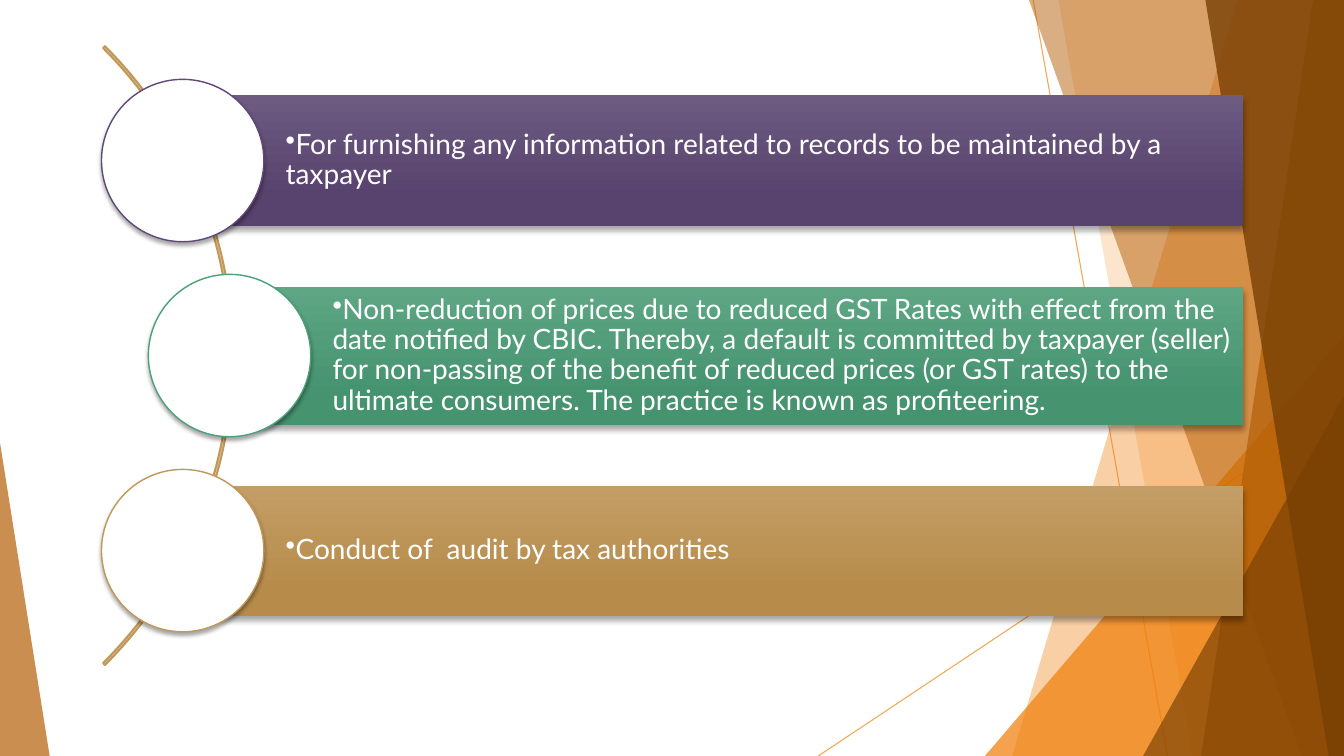
from lxml.etree import SubElement
from pptx import Presentation
from pptx.dml.color import RGBColor
from pptx.enum.shapes import MSO_CONNECTOR, MSO_SHAPE
from pptx.enum.text import MSO_ANCHOR, PP_ALIGN
from pptx.oxml.ns import qn
from pptx.util import Pt

WIDTH, HEIGHT = 960, 540
WHITE = RGBColor(0xFF, 0xFF, 0xFF)
ORANGE = RGBColor(0xF0, 0x7F, 0x09)
RUST = RGBColor(0xB4, 0x5F, 0x07)
BROWN = RGBColor(0x78, 0x40, 0x04)
PURPLE = RGBColor(0x60, 0x48, 0x78)
PURPLE_TOP = RGBColor(0x6D, 0x5B, 0x81)
PURPLE_END = RGBColor(0x58, 0x42, 0x6E)
GREEN = RGBColor(0x4D, 0xA0, 0x7B)
GREEN_TOP = RGBColor(0x5E, 0xA6, 0x84)
GREEN_END = RGBColor(0x46, 0x93, 0x70)
GOLD = RGBColor(0xC1, 0x98, 0x59)
GOLD_TOP = RGBColor(0xC4, 0x9E, 0x67)
GOLD_END = RGBColor(0xB7, 0x8C, 0x4B)


class Deck:
    font = "Lato"
    size = 20

    def __init__(self):
        self.prs = Presentation()
        self.prs.slide_width, self.prs.slide_height = Pt(WIDTH), Pt(HEIGHT)
        self.s = self.prs.slides.add_slide(self.prs.slide_layouts[6])

    def fade(self, sp, percent):
        color = sp._element.spPr.find(".//" + qn("a:srgbClr"))
        SubElement(color, qn("a:alpha"), val=str(percent * 1000))

    def cast_shadow(self, sp, blur, dist):
        effects = sp._element.spPr.find(qn("a:effectLst"))
        shadow = SubElement(effects, qn("a:outerShdw"), blurRad=str(Pt(blur)),
                            dist=str(Pt(dist)), dir="5400000",
                            algn="ctr", rotWithShape="0")
        color = SubElement(shadow, qn("a:srgbClr"), val="000000")
        SubElement(color, qn("a:alpha"), val="35000")

    def shape(self, kind, x, y, w, h):
        sp = self.s.shapes.add_shape(kind, Pt(x), Pt(y), Pt(w), Pt(h))
        sp.shadow.inherit = False
        sp.line.fill.background()
        return sp

    def tint(self, sp, color, percent):
        sp.shadow.inherit = False
        sp.fill.solid()
        sp.fill.fore_color.rgb = color
        self.fade(sp, percent)
        sp.line.fill.background()

    def line(self, x1, y1, x2, y2):
        sp = self.s.shapes.add_connector(MSO_CONNECTOR.STRAIGHT,
                                         Pt(x1), Pt(y1), Pt(x2), Pt(y2))
        sp.line.color.rgb = ORANGE
        sp.line.width = Pt(0.75)
        self.fade(sp, 70)
        SubElement(sp._element.spPr, qn("a:effectLst"))

    def band(self, top_x, bottom_x, color, percent):
        """Slanted band that reaches the right edge of the slide."""
        fb = self.s.shapes.build_freeform(top_x, 0, scale=Pt(1))
        fb.add_line_segments([(WIDTH, 0), (WIDTH, HEIGHT), (bottom_x, HEIGHT)])
        self.tint(fb.convert_to_shape(), color, percent)

    def triangle(self, x, y, w, apex, color, percent):
        sp = self.shape(MSO_SHAPE.ISOSCELES_TRIANGLE, x, y, w, HEIGHT - y)
        sp.adjustments[0] = apex
        self.tint(sp, color, percent)

    def arc(self, x, y, size):
        sp = self.shape(MSO_SHAPE.BLOCK_ARC, x, y, size, size)
        for i, value in enumerate((189, 27, 0.003)):
            sp.adjustments[i] = value
        sp.fill.background()
        sp.line.color.rgb = GOLD
        sp.line.width = Pt(1.5)

    def bar(self, x, y, w, h, top, end, text):
        sp = self.shape(MSO_SHAPE.RECTANGLE, x, y, w, h)
        sp.fill.gradient()
        sp.fill.gradient_angle = 270
        for stop, place, color in zip(sp.fill.gradient_stops, (0, 0.78), (top, end)):
            stop.position = place
            stop.color.rgb = color
        self.cast_shadow(sp, 4, 3)
        tf = sp.text_frame
        tf.word_wrap = True
        tf.vertical_anchor = MSO_ANCHOR.MIDDLE
        tf.margin_left = Pt(73.5)
        tf.margin_top = tf.margin_right = tf.margin_bottom = Pt(4)
        p = tf.paragraphs[0]
        p.alignment = PP_ALIGN.LEFT
        p.line_spacing = 0.9
        pPr = p._p.get_or_add_pPr()
        pPr.set("marL", "0")
        pPr.set("indent", "0")
        SubElement(pPr, qn("a:buChar"), char="•")
        r = p.add_run()
        r.text = text
        r.font.name = self.font
        r.font.size = Pt(self.size)
        r.font.color.rgb = WHITE

    def circle(self, cx, cy, size, color):
        sp = self.shape(MSO_SHAPE.OVAL, cx - size / 2, cy - size / 2, size, size)
        sp.fill.solid()
        sp.fill.fore_color.rgb = WHITE
        sp.line.color.rgb = color
        sp.line.width = Pt(1)
        self.cast_shadow(sp, 3, 2)


def main():
    deck = Deck()

    # Backdrop of lines, slanted bands and triangles
    deck.line(738, 0, 834, HEIGHT)
    deck.line(WIDTH, 290, 584.5, HEIGHT)
    deck.band(884, 723, ORANGE, 36)
    deck.band(756, 852, ORANGE, 20)
    deck.triangle(703.5, 240, 256.5, 1, ORANGE, 72)
    deck.band(735, 929.5, RUST, 50)
    deck.band(938, 858, RUST, 70)
    deck.band(861, 949, BROWN, 80)
    deck.triangle(816.5, 283, 143.5, 1, BROWN, 66)
    deck.triangle(0, 316, 35.5, 0, RUST, 70)

    # Curved list: each bar starts at the centre of its circle
    deck.arc(-458.5, -58.5, 625)
    items = [
        (130.5, 93, PURPLE, PURPLE_TOP, PURPLE_END,
         "For furnishing any information related to records to be maintained "
         "by a taxpayer"),
        (164, 98.5, GREEN, GREEN_TOP, GREEN_END,
         "Non-reduction of prices due to reduced GST Rates with effect from "
         "the date notified by CBIC. Thereby, a default is committed by "
         "taxpayer (seller) for non-passing of the benefit of reduced prices "
         "(or GST rates) to the ultimate consumers. The practice is known as "
         "profiteering."),
        (130.5, 93, GOLD, GOLD_TOP, GOLD_END,
         "Conduct of  audit by tax authorities"),
    ]
    right, first_y, pitch = 888, 114.7, 139.3
    for i, (x, h, color, top, end, text) in enumerate(items):
        y = first_y + i * pitch
        deck.bar(x, y - h / 2, right - x, h, top, end, text)
        deck.circle(x, y, 116, color)

    deck.prs.save("out.pptx")


if __name__ == "__main__":
    main()
